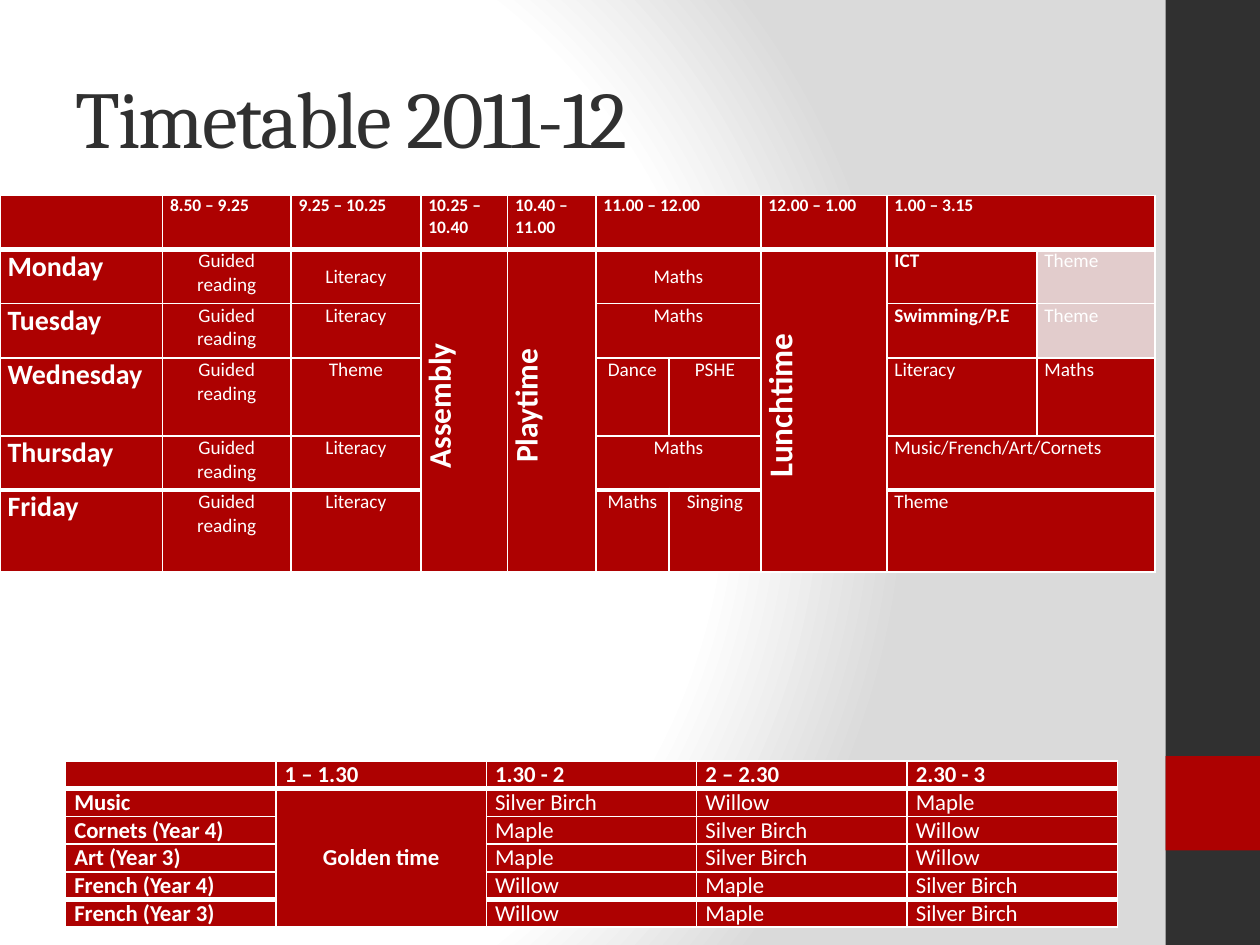
from dataclasses import dataclass

from lxml.etree import SubElement
from pptx import Presentation
from pptx.dml.color import RGBColor
from pptx.enum.shapes import MSO_SHAPE as Shape
from pptx.enum.text import MSO_ANCHOR as Anchor, PP_ALIGN as Align
from pptx.oxml import parse_xml
from pptx.oxml.ns import nsdecls, qn
from pptx.util import Inches, Pt


@dataclass(frozen=True)
class Theme:
    """Colours, fonts and type sizes of the deck."""
    white: str = "FFFFFF"
    grey: str = "DADADA"
    dark: str = "303030"
    red: str = "AD0101"
    pale: str = "E2CCCC"
    heading: str = "Cambria"
    body: str = "Calibri"
    title_size: int = 46
    day_size: int = 16
    time_size: int = 10
    lesson_size: int = 11
    rota_size: int = 13


THEME = Theme()
BREAK_SIZES = {"Assembly": 18, "Playtime": 18, "Lunchtime": 19}
BOLD_LESSONS = ("ICT", "Swimming/P.E")
LEFT, UP = "<", "^"

WEEK_COLUMNS = (1.29, 1.02, 1.03, 0.69, 0.7, 0.58, 0.73, 1, 1.19, 0.94)
WEEK_ROWS = (0.43, 0.43, 0.43, 0.62, 0.43, 0.65)
WEEK = (
    ("", "8.50 – 9.25", "9.25 – 10.25", "10.25 – 10.40", "10.40 – 11.00",
     "11.00 – 12.00", LEFT, "12.00 – 1.00", "1.00 – 3.15", LEFT),
    ("Monday", "Guided reading", "Literacy", "Assembly", "Playtime",
     "Maths", LEFT, "Lunchtime", "ICT", "Theme"),
    ("Tuesday", "Guided reading", "Literacy", UP, UP,
     "Maths", LEFT, UP, "Swimming/P.E", "Theme"),
    ("Wednesday", "Guided reading", "Theme", UP, UP,
     "Dance", "PSHE", UP, "Literacy", "Maths"),
    ("Thursday", "Guided reading", "Literacy", UP, UP,
     "Maths", LEFT, UP, "Music/French/Art/Cornets", LEFT),
    ("Friday", "Guided reading", "Literacy", UP, UP,
     "Maths", "Singing", UP, "Theme", LEFT),
)
ROTA = (
    ("", "1 – 1.30", "1.30 - 2", "2 – 2.30", "2.30 - 3"),
    ("Music", "Golden time", "Silver Birch", "Willow", "Maple"),
    ("Cornets (Year 4)", UP, "Maple", "Silver Birch", "Willow"),
    ("Art (Year 3)", UP, "Maple", "Silver Birch", "Willow"),
    ("French (Year 4)", UP, "Willow", "Maple", "Silver Birch"),
    ("French (Year 3)", UP, "Willow", "Maple", "Silver Birch"),
)


def color(value):
    """Turn a hex string into a colour."""
    return RGBColor.from_string(value)


def paint_background(page):
    """Fill the page with a circular white to grey gradient."""
    page.background.fill.solid()
    properties = page.background._cSld.bg.bgPr
    stops = "".join(
        f'<a:gs pos="{place * 1000}"><a:srgbClr val="{value}"/></a:gs>'
        for place, value in ((0, THEME.white), (75, THEME.white), (100, THEME.grey)))
    gradient = parse_xml(
        f'<a:gradFill {nsdecls("a")} rotWithShape="1"><a:gsLst>{stops}</a:gsLst>'
        '<a:path path="circle"><a:fillToRect l="20000" t="50000" r="100000" b="50000"/>'
        '</a:path></a:gradFill>')
    properties.replace(properties[0], gradient)


def add_sidebar(page, left, top, width, height):
    """Place the dark side band and its red block."""
    for y, tall, fill in ((top, height, THEME.dark), (top + 6, 0.75, THEME.red)):
        band = page.shapes.add_shape(
            Shape.RECTANGLE, Inches(left), Inches(y), Inches(width), Inches(tall))
        band.shadow.inherit = False
        band.fill.solid()
        band.fill.fore_color.rgb = color(fill)
        band.line.fill.background()


def add_title(page, left, top, width, height):
    """Place the slide title."""
    box = page.shapes.add_textbox(Inches(left), Inches(top), Inches(width), Inches(height))
    frame = box.text_frame
    frame.word_wrap = True
    frame.vertical_anchor = Anchor.MIDDLE
    para = frame.paragraphs[0]
    span = para.add_run()
    span.text = "Timetable 2011-12"
    span.font._element.set("spc", "-100")
    para.font.name = THEME.heading
    para.font.size = Pt(THEME.title_size)
    para.font.color.rgb = color(THEME.dark)


def set_borders(cell, heavy):
    """Draw white borders, three points wide on the heavy sides."""
    properties = cell._tc.get_or_add_tcPr()
    for index, side in enumerate("LRTB"):
        line = SubElement(properties, qn(f"a:ln{side}"), w=str(Pt(3 if side in heavy else 1)))
        fill = SubElement(line, qn("a:solidFill"))
        SubElement(fill, qn("a:srgbClr"), val=THEME.white)
        properties.insert(index, line)


def write_cell(cell, text, size, bold, align=Align.LEFT, anchor=Anchor.TOP):
    """Write one styled paragraph into a cell."""
    cell.vertical_anchor = anchor
    para = cell.text_frame.paragraphs[0]
    para.alignment = align
    para.font.name = THEME.body
    para.font.size = Pt(size)
    para.font.bold = bold
    para.font.color.rgb = color(THEME.white)
    if text:
        para.add_run().text = text
    else:
        para._p.get_or_add_endParaRPr().set("sz", str(size * 100))


def run_length(items, mark):
    """Count a first item and the marks that follow it."""
    count = 1
    while count < len(items) and items[count] == mark:
        count += 1
    return count


def add_grid(page, left, top, columns, rows, content, inset, style):
    """Place a bordered table and style every cell that holds content."""
    table = page.shapes.add_table(
        len(rows), len(columns), Inches(left), Inches(top),
        Inches(sum(columns)), Inches(sum(rows))).table
    for column, width in zip(table.columns, columns):
        column.width = Inches(width)
    for row, height in zip(table.rows, rows):
        row.height = Inches(height)
    last = len(rows) - 1
    for y, texts in enumerate(content):
        for x, text in enumerate(texts):
            cell = table.cell(y, x)
            cell.fill.solid()
            cell.fill.fore_color.rgb = color(THEME.red)
            if text in (LEFT, UP):
                continue
            wide = run_length(texts[x:], LEFT)
            tall = run_length([line[x] for line in content[y:]], UP)
            if wide * tall > 1:
                cell.merge(table.cell(y + tall - 1, x + wide - 1))
            cell.margin_left = cell.margin_right = Inches(inset)
            cell.margin_top = cell.margin_bottom = 0
            style(cell, text, y, x)
            heavy_top = "T" if y in (1, last) else ""
            heavy_bottom = "B" if y + tall - 1 in (0, last - 1) else ""
            set_borders(cell, heavy_top + heavy_bottom)


def style_week_cell(cell, text, y, x):
    """Style a cell of the weekly timetable."""
    if y == 0:
        write_cell(cell, text, THEME.time_size, True)
    elif x == 0:
        write_cell(cell, text, THEME.day_size, True)
    elif text in BREAK_SIZES:
        write_cell(cell, text, BREAK_SIZES[text], True, Align.CENTER, Anchor.MIDDLE)
        cell._tc.get_or_add_tcPr().set("vert", "vert270")
        cell.text_frame.paragraphs[0]._p.get_or_add_pPr().set("marL", str(Inches(0.08)))
    else:
        align = Align.CENTER if x < 8 else Align.LEFT
        anchor = Anchor.MIDDLE if y == 1 and x in (2, 5) else Anchor.TOP
        write_cell(cell, text, THEME.lesson_size, text in BOLD_LESSONS, align, anchor)
        if text == "Theme" and x == 9:
            cell.fill.fore_color.rgb = color(THEME.pale)


def style_rota_cell(cell, text, y, x):
    """Style a cell of the afternoon rota."""
    golden = text == "Golden time"
    write_cell(cell, text, THEME.rota_size, y == 0 or x == 0 or golden,
               Align.CENTER if golden else Align.LEFT,
               Anchor.MIDDLE if golden else Anchor.TOP)


def main():
    """Build the timetable slide."""
    deck = Presentation()
    deck.slide_width, deck.slide_height = Inches(10), Inches(7.5)
    page = deck.slides.add_slide(deck.slide_layouts[6])
    paint_background(page)
    add_sidebar(page, 9.25, 0, 0.75, 7.5)
    add_title(page, 0.5, 0.3, 8.33, 1.25)
    add_grid(page, 0, 1.55, WEEK_COLUMNS, WEEK_ROWS, WEEK, 0.06, style_week_cell)
    add_grid(page, 0.52, 6.04, [1.67] * 5, [0.22] * 6, ROTA, 0.07, style_rota_cell)
    deck.save("out.pptx")


if __name__ == "__main__":
    main()
